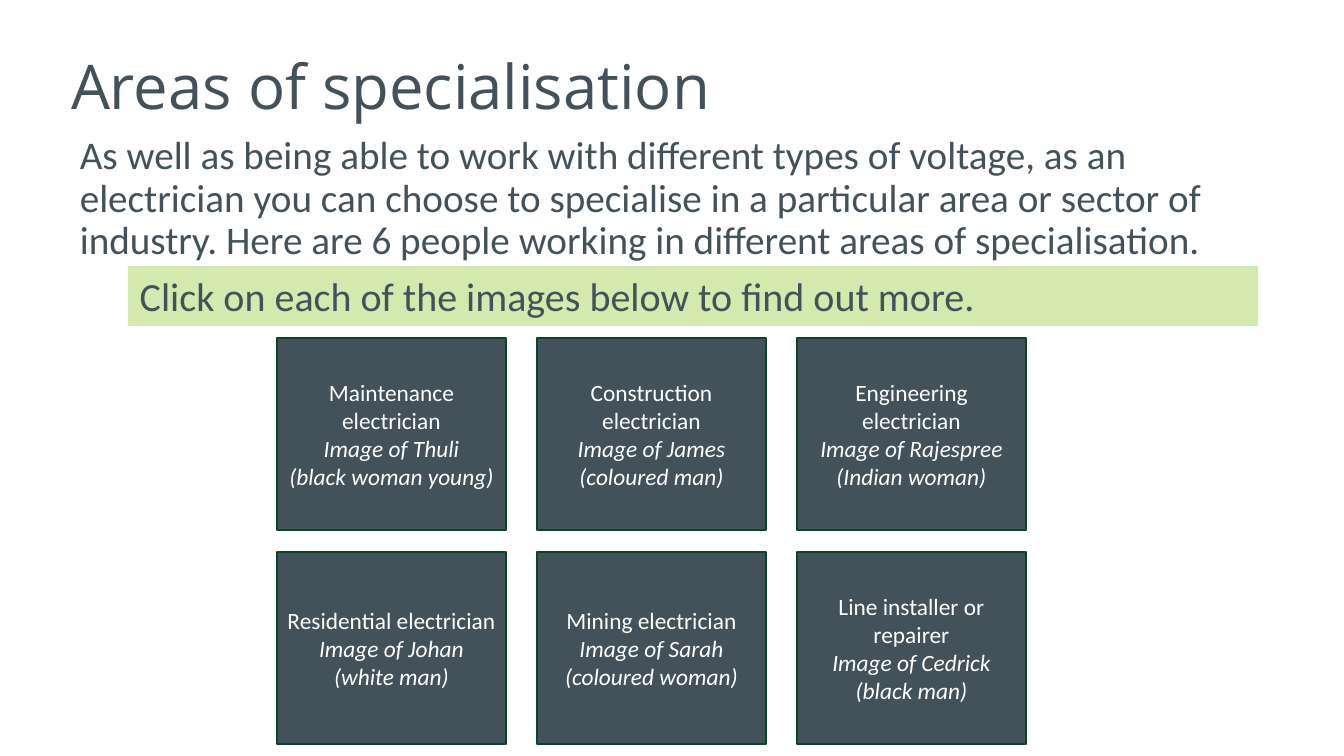
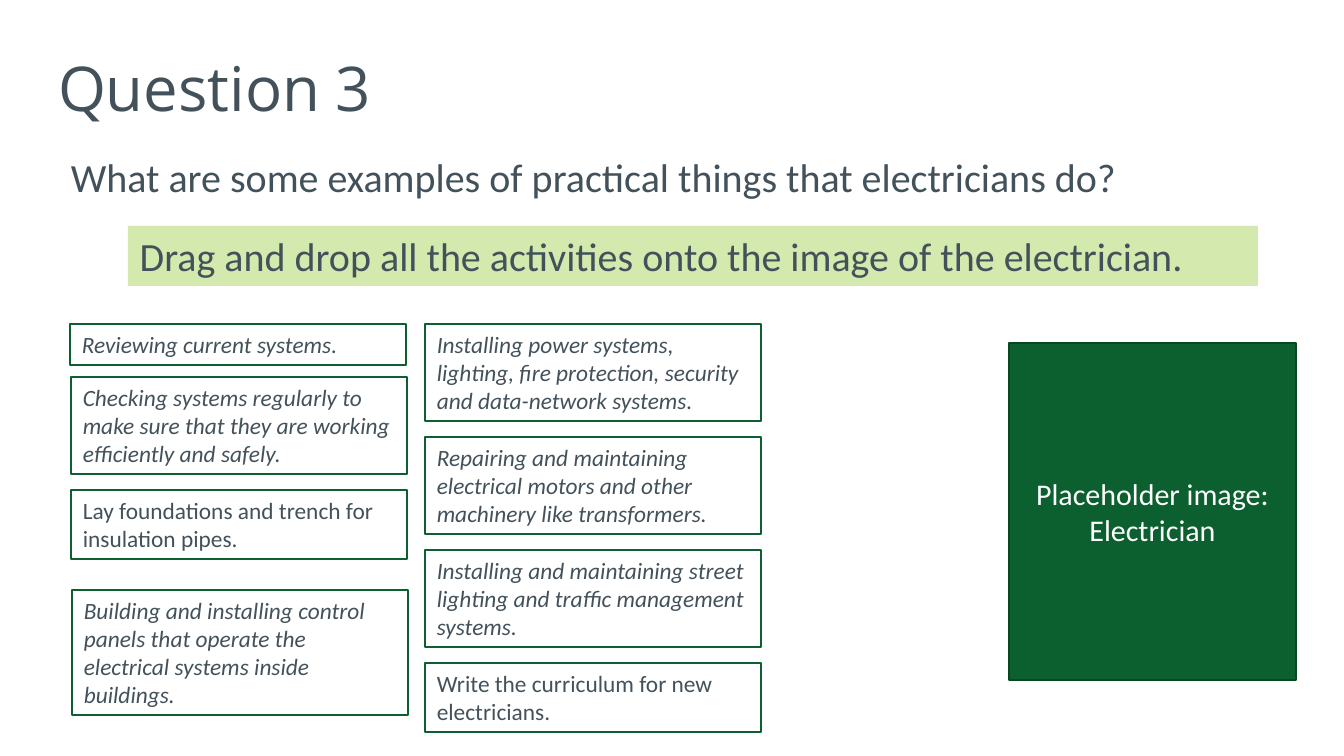
from pptx import Presentation
from pptx.dml.color import RGBColor
from pptx.enum.shapes import MSO_SHAPE
from pptx.enum.text import MSO_ANCHOR, MSO_AUTO_SIZE, PP_ALIGN
from pptx.util import Pt

SCALE = 7620
SLATE, GREEN, DARK_GREEN, LIME, WHITE = "43525A", "0C6030", "094724", "D3E9AD", "FFFFFF"
TITLE_FONT, BODY_FONT = "Open Sans", "Calibri"

SPECIALISATION = {
    "title": ("Areas of specialisation", (59, 17, 1159, 146)),
    "intro": ("As well as being able to work with different types of voltage, as an electrician "
              "you can choose to specialise in a particular area or sector of industry. "
              "Here are 6 people working in different areas of specialisation.",
              (68, 130, 1218, 140), 23.5),
    "instruction": ("Click on each of the images below to find out more.", 266),
}
ELECTRICIANS = [
    ("Maintenance electrician", "Image of Thuli", "(black woman young)"),
    ("Construction electrician", "Image of James", "(coloured man)"),
    ("Engineering electrician", "Image of Rajespree", "(Indian woman)"),
    ("Residential electrician", "Image of Johan", "(white man)"),
    ("Mining electrician", "Image of Sarah", "(coloured woman)"),
    ("Line installer or repairer", "Image of Cedrick", "(black man)"),
]
CARD_LEFT, CARD_TOP, CARD_WIDTH, CARD_HEIGHT = 277, 338, 229, 192
CARD_GAP_X, CARD_GAP_Y, CARD_COLUMNS = 31, 22, 3

QUESTION = {
    "title": ("Question 3", (46, 19, 1268, 146)),
    "intro": ("What are some examples of practical things that electricians do?",
              (59, 152, 1238, 60), 24),
    "instruction": ("Drag and drop all the activities onto the image of the electrician.", 226),
}
ACTIVITIES = [
    (70, 324, 1, True, "Reviewing current systems."),
    (71, 377, 3, True, "Checking systems regularly to make sure that they are working efficiently and safely."),
    (71, 490, 2, False, "Lay foundations and trench for insulation pipes."),
    (72, 590, 4, True, "Building and installing control panels that operate the electrical systems inside buildings."),
    (425, 324, 3, True, "Installing power systems, lighting, fire protection, security and data-network systems."),
    (425, 437, 3, True, "Repairing and maintaining electrical motors and other machinery like transformers."),
    (425, 550, 3, True, "Installing and maintaining street lighting and traffic management systems."),
    (425, 663, 2, False, "Write the curriculum for new electricians."),
]
ACTIVITY_WIDTH, LINE_HEIGHT, ACTIVITY_PADDING = 336, 28, 13
DROP_TARGET = ("Placeholder image: Electrician", (1009, 343, 287, 337))


def px(length):
    return int(length * SCALE)


def color(value):
    return RGBColor.from_string(value)


def write(shape, lines, size, ink=SLATE, font=BODY_FONT, align=PP_ALIGN.LEFT,
          anchor=MSO_ANCHOR.TOP, italics=(), spacing=None):
    frame = shape.text_frame
    frame.text = "\n".join(lines)
    frame.word_wrap = True
    frame.auto_size = MSO_AUTO_SIZE.NONE
    frame.vertical_anchor = anchor
    for index, para in enumerate(frame.paragraphs):
        para.alignment = align
        if spacing:
            para.line_spacing = spacing
        for span in para.runs:
            span.font.name = font
            span.font.size = Pt(size)
            span.font.color.rgb = color(ink)
            span.font.italic = index in italics


def add_box(page, bounds, fill=None, line=None, line_width=1):
    box = page.shapes.add_shape(MSO_SHAPE.RECTANGLE, *map(px, bounds))
    box.shadow.inherit = False
    if fill:
        box.fill.solid()
        box.fill.fore_color.rgb = color(fill)
    else:
        box.fill.background()
    if line:
        box.line.color.rgb = color(line)
        box.line.width = Pt(line_width)
    else:
        box.line.fill.background()
    return box


def add_page(deck, content):
    page = deck.slides.add_slide(deck.slide_layouts[5])
    text, bounds = content["title"]
    title = page.shapes.title
    title.left, title.top, title.width, title.height = map(px, bounds)
    write(title, [text], 37, font=TITLE_FONT, anchor=MSO_ANCHOR.MIDDLE, spacing=0.9)

    text, bounds, size = content["intro"]
    intro = page.shapes.add_textbox(*map(px, bounds))
    write(intro, [text], size, spacing=0.9)

    text, top = content["instruction"]
    write(add_box(page, (128, top, 1130, 60), LIME), [text], 24)
    return page


def build_specialisation(deck):
    page = add_page(deck, SPECIALISATION)
    for index, lines in enumerate(ELECTRICIANS):
        row, column = divmod(index, CARD_COLUMNS)
        left = CARD_LEFT + column * (CARD_WIDTH + CARD_GAP_X)
        top = CARD_TOP + row * (CARD_HEIGHT + CARD_GAP_Y)
        card = add_box(page, (left, top, CARD_WIDTH, CARD_HEIGHT), SLATE, DARK_GREEN)
        write(card, lines, 14, WHITE, align=PP_ALIGN.CENTER,
              anchor=MSO_ANCHOR.MIDDLE, italics=(1, 2))
        frame = card.text_frame
        frame.margin_left = frame.margin_right = px(10)
        frame.margin_top = frame.margin_bottom = px(5)


def build_question(deck):
    page = add_page(deck, QUESTION)
    for left, top, line_count, italic, text in ACTIVITIES:
        height = line_count * LINE_HEIGHT + ACTIVITY_PADDING
        activity = add_box(page, (left, top, ACTIVITY_WIDTH, height), line=GREEN, line_width=0.75)
        write(activity, [text], 14, italics=(0,) if italic else ())
    text, bounds = DROP_TARGET
    target = add_box(page, bounds, GREEN, DARK_GREEN)
    write(target, [text], 18, WHITE, align=PP_ALIGN.CENTER, anchor=MSO_ANCHOR.MIDDLE)


def main():
    deck = Presentation()
    deck.slide_width, deck.slide_height = px(1344), px(756)
    build_specialisation(deck)
    build_question(deck)
    deck.save("out.pptx")


if __name__ == "__main__":
    main()
